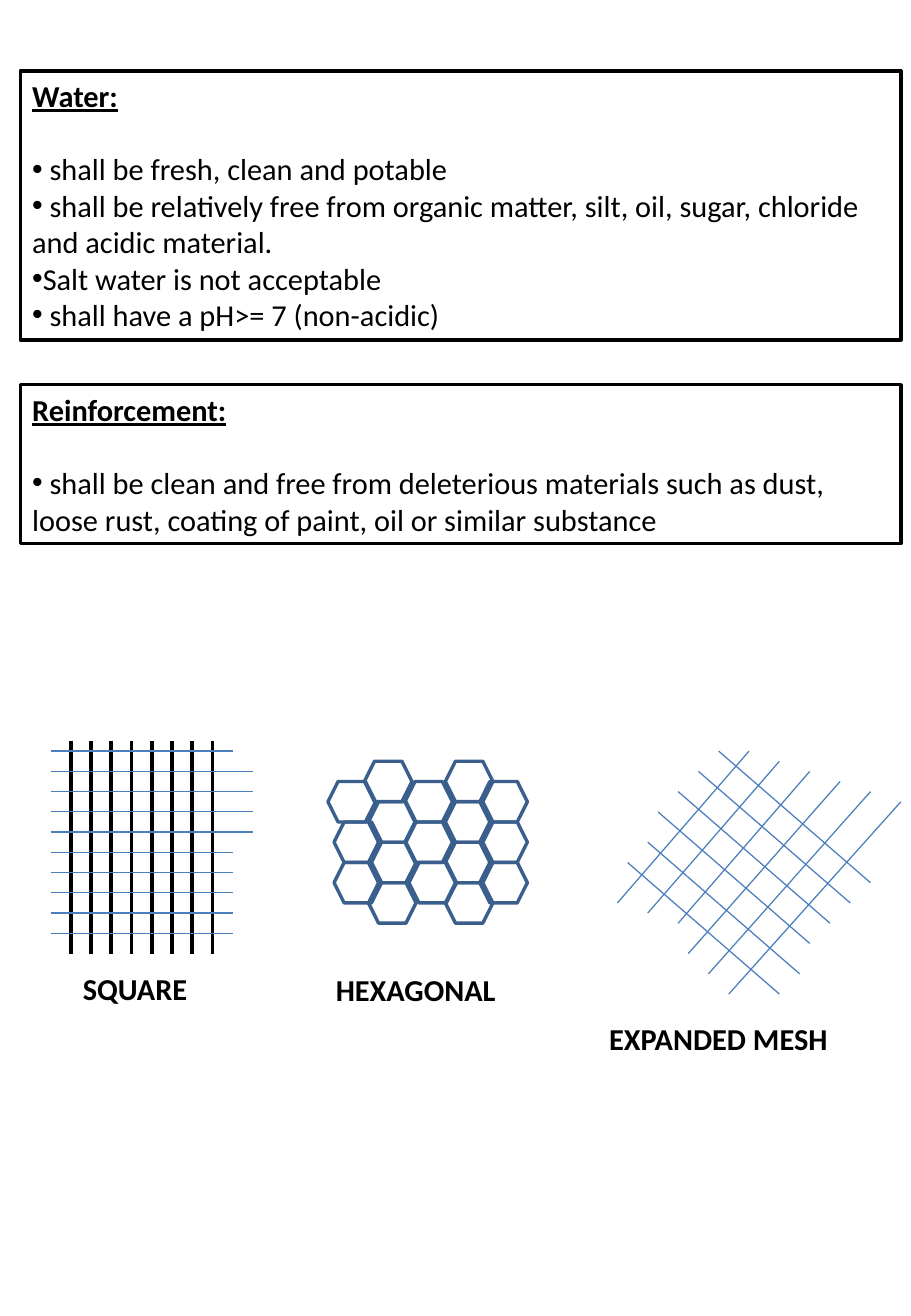
import pptx
import pptx.util
import pptx.dml.color
import pptx.enum.shapes
import pptx.enum.text
import pptx.oxml.ns
import lxml.etree

SCALE = 7620  # EMU in one px, 120 px to the inch
COLORS = {"ink": "000000", "paper": "FFFFFF", "wire": "4B7EBC", "hex": "3A5F8C"}
BODY = {"name": "Calibri", "size": pptx.util.Pt(18), "bold": False}
HEAD = {**BODY, "bold": True, "underline": True}
LABEL = {**BODY, "bold": True}
FRAME = {"word_wrap": True, "vertical_anchor": pptx.enum.text.MSO_ANCHOR.TOP}

WATER = [
    " shall be fresh, clean and potable",
    " shall be relatively free from organic matter, silt, oil, sugar, chloride and acidic material.",
    "Salt water is not acceptable",
    " shall have a pH>= 7 (non-acidic)",
]
STEEL = [
    " shall be clean and free from deleterious materials such as dust, "
    "loose rust, coating of paint, oil or similar substance",
]


def px(*nums):
    return [pptx.util.Emu(num * SCALE) for num in nums]


def color(key):
    return pptx.dml.color.RGBColor.from_string(COLORS[key])


def style(item, values):
    for name, value in values.items():
        setattr(item, name, value)


def stroke(shape, key, width):
    shape.line.color.rgb = color(key)
    shape.line.width = pptx.util.Pt(width)


def write(para, text, values):
    run = para.add_run()
    run.text = text
    style(run.font, values)
    run.font.color.rgb = color("ink")
    para.alignment = pptx.enum.text.PP_ALIGN.LEFT


def bullet(para):
    props = para._p.get_or_add_pPr()
    font = lxml.etree.SubElement(props, pptx.oxml.ns.qn("a:buFont"))
    font.set("typeface", "Arial")
    mark = lxml.etree.SubElement(props, pptx.oxml.ns.qn("a:buChar"))
    mark.set("char", "•")


def panel(slide, place, title, points):
    box = slide.shapes.add_shape(pptx.enum.shapes.MSO_SHAPE.RECTANGLE, *px(*place))
    box.shadow.inherit = False
    box.fill.solid()
    box.fill.fore_color.rgb = color("paper")
    stroke(box, "ink", 2)
    style(box.text_frame, FRAME)
    head = box.text_frame.paragraphs[0]
    write(head, title, HEAD)
    head.space_after = pptx.util.Pt(22)
    for point in points:
        para = box.text_frame.add_paragraph()
        write(para, point, BODY)
        bullet(para)


def line(slide, start, end, key="wire", width=0.75):
    kind = pptx.enum.shapes.MSO_CONNECTOR.STRAIGHT
    wire = slide.shapes.add_connector(kind, *px(*start, *end))
    stroke(wire, key, width)
    props = wire._element.spPr
    lxml.etree.SubElement(props, pptx.oxml.ns.qn("a:effectLst"))


def cell(group, left, top):
    kind = pptx.enum.shapes.MSO_SHAPE.HEXAGON
    shape = group.shapes.add_shape(kind, *px(left, top, 47, 40))
    shape.shadow.inherit = False
    shape.fill.background()
    stroke(shape, "hex", 2)


def label(slide, place, text):
    box = slide.shapes.add_textbox(*px(*place))
    style(box.text_frame, FRAME)
    write(box.text_frame.paragraphs[0], text, LABEL)


def square(slide):
    for col in range(8):
        left = 70 + 20 * col
        line(slide, (left, 732), (left, 942), "ink", 2.25)
    # Ten full rows, then four more shifted to the right
    for left, first, count in [(50, 742, 10), (70, 762, 4)]:
        for row in range(count):
            top = first + 20 * row
            line(slide, (left, top), (left + 180, top))


def comb(slide):
    group = slide.shapes.add_group_shape()
    # Top of each column, then the left edge of each cell in it
    cols = [
        (772, [324, 330, 330]),
        (752, [360, 364, 364, 364]),
        (772, [400, 400, 404]),
        (752, [440] * 4),
        (772, [474] * 3),
    ]
    for top, lefts in cols:
        for row, left in enumerate(lefts):
            cell(group, left, top + 40 * row)


def mesh(slide):
    falls = [(710, 742), (690, 762), (670, 782), (650, 802), (640, 832), (620, 852)]
    for left, top in falls:
        line(slide, (left, top), (left + 150, top + 130))
    feet = [(720, 982), (700, 962), (680, 942), (670, 912), (640, 902), (610, 892)]
    for num, foot in enumerate(feet):
        line(slide, (890 - 30 * num, 792 - 10 * num), foot)


def main():
    deck = pptx.Presentation()
    deck.slide_width, deck.slide_height = px(900, 1300)
    slide = deck.slides.add_slide(deck.slide_layouts[6])

    # Material rules
    panel(slide, (20, 70, 870, 266), "Water:", WATER)
    panel(slide, (20, 380, 870, 157), "Reinforcement:", STEEL)

    # Mesh types
    square(slide)
    comb(slide)
    mesh(slide)

    # Labels
    label(slide, (70, 952, 180, 50), "SQUARE")
    label(slide, (320, 953, 190, 48), "HEXAGONAL")
    label(slide, (590, 1002, 250, 48), "EXPANDED MESH")

    deck.save("out.pptx")


if __name__ == "__main__":
    main()
